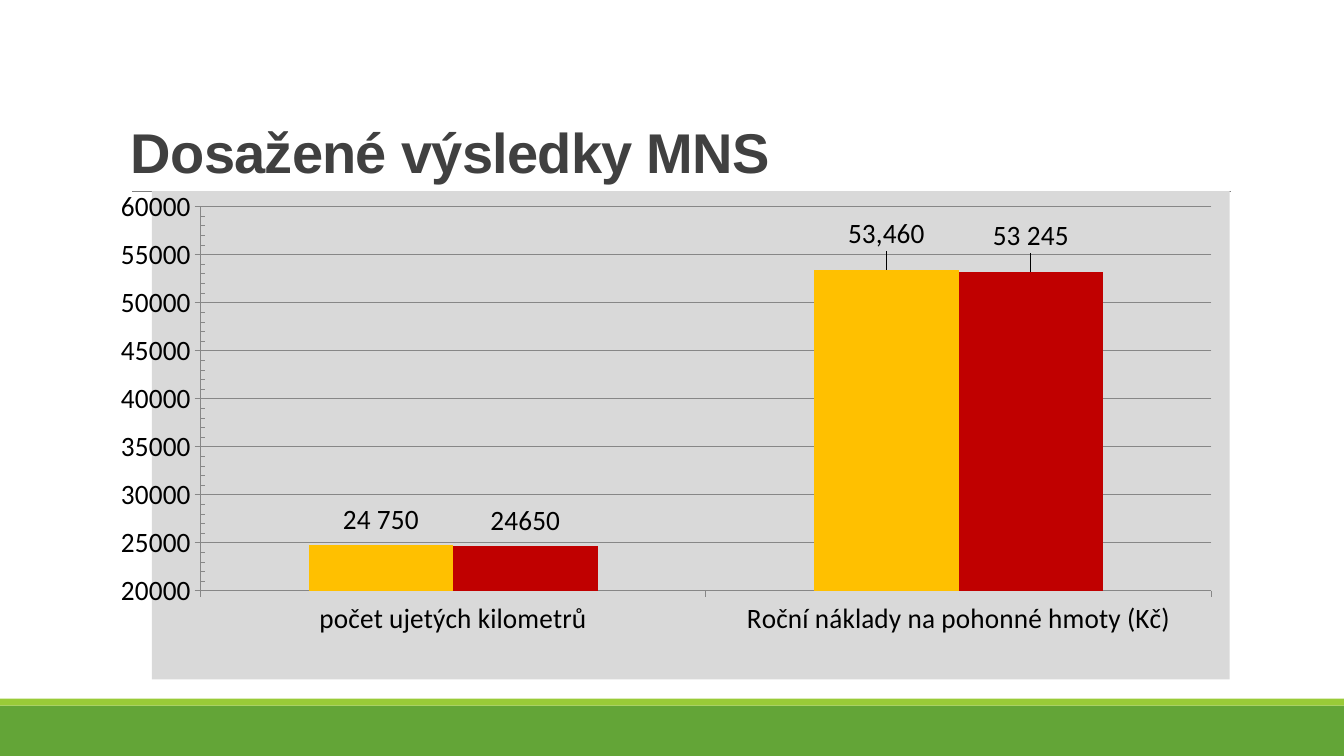
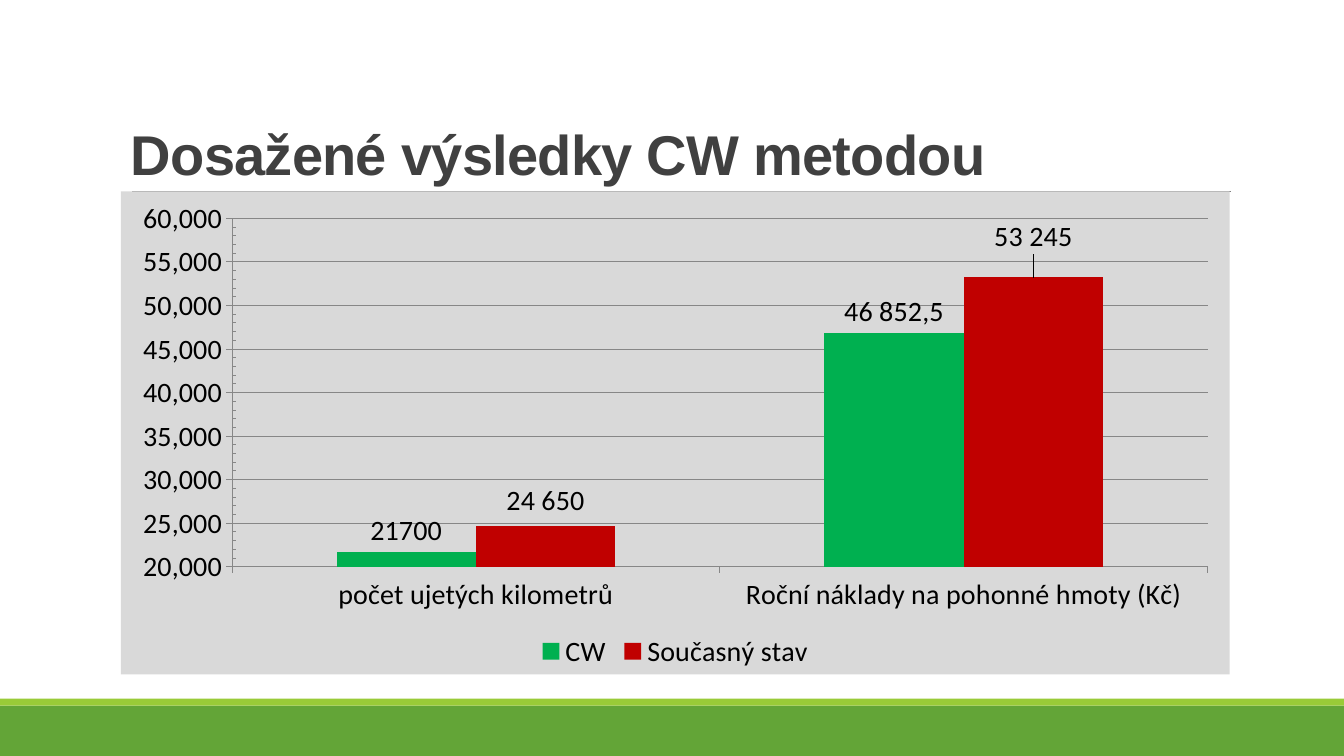
from dataclasses import dataclass

from lxml.etree import SubElement
from pptx import Presentation
from pptx.chart.data import CategoryChartData
from pptx.dml.color import RGBColor
from pptx.enum.chart import XL_CHART_TYPE as ChartType
from pptx.enum.chart import XL_LABEL_POSITION as LabelPosition
from pptx.enum.chart import XL_LEGEND_POSITION as LegendPosition
from pptx.enum.chart import XL_TICK_MARK as TickMark
from pptx.enum.shapes import MSO_CONNECTOR as Connector
from pptx.enum.shapes import MSO_SHAPE as Shape
from pptx.enum.text import MSO_ANCHOR as Anchor
from pptx.oxml import parse_xml
from pptx.oxml.ns import nsdecls, qn
from pptx.util import Inches, Pt

WIDTH, HEIGHT = Inches(13.33), Inches(7.5)
CATEGORIES = ["počet ujetých kilometrů", "Roční náklady na pohonné hmoty (Kč)"]


@dataclass(frozen=True)
class Theme:
    """Colours, fonts and type sizes of the deck."""
    band: str = "63A537"
    strip: str = "99CB38"
    rule: str = "808080"
    title: str = "404040"
    text: str = "000000"
    panel: str = "D9D9D9"
    axis: str = "878787"
    mns: str = "FFC000"
    cw: str = "00B050"
    current: str = "C00000"
    title_font: str = "Arial"
    chart_font: str = "Calibri"
    title_size: int = 40
    chart_size: int = 20


@dataclass(frozen=True)
class Label:
    """A point label: optional wording and upward shift as a share of the chart."""
    text: str = ""
    lift: float = 0


@dataclass(frozen=True)
class Method:
    """One column series with its point labels."""
    name: str
    values: tuple
    color: str
    labels: tuple
    number_format: str = "General"


THEME = Theme()


def rgb(color):
    """Turn a hex string into a colour."""
    return RGBColor.from_string(color)


def place(left, top, width, height):
    """Turn percentages of the slide into a position and a size."""
    return (int(WIDTH * left / 100), int(HEIGHT * top / 100),
            int(WIDTH * width / 100), int(HEIGHT * height / 100))


def style_font(font, name, size, color, bold=False):
    """Set the face, size, colour and weight of a font."""
    font.name, font.size, font.bold = name, Pt(size), bold
    font.color.rgb = rgb(color)


def style_chart_font(font):
    """Give a font the chart's common text style."""
    style_font(font, THEME.chart_font, THEME.chart_size, THEME.text)


def add_band(slide, top, height, color):
    """Draw a full-width band."""
    band = slide.shapes.add_shape(Shape.RECTANGLE, *place(0, top, 100, height))
    band.shadow.inherit = False
    band.fill.solid()
    band.fill.fore_color.rgb = rgb(color)
    band.line.fill.background()


def add_rule(slide):
    """Draw the thin line under the title."""
    left, top, width, _ = place(9.83, 25.33, 81.77, 0)
    rule = slide.shapes.add_connector(Connector.STRAIGHT, left, top, left + width, top)
    rule.line.color.rgb = rgb(THEME.rule)
    rule.line.width = Pt(0.5)
    SubElement(rule._element.spPr, qn("a:effectLst"))


def add_title(slide, wording, bottom):
    """Write the slide title, sitting on the given bottom edge."""
    top = 4.13
    frame = slide.shapes.add_textbox(*place(9, top, 82.5, bottom - top)).text_frame
    frame.word_wrap = True
    frame.vertical_anchor = Anchor.BOTTOM
    frame.text = wording
    paragraph = frame.paragraphs[0]
    paragraph.line_spacing = 0.85
    run = paragraph.runs[0]
    style_font(run.font, THEME.title_font, THEME.title_size, THEME.title, bold=True)
    run._r.get_or_add_rPr().set("spc", "-50")


def manual_layout(**settings):
    """Build a chart layout element from its settings."""
    rows = "".join(f'<c:{key} val="{value}"/>' for key, value in settings.items())
    return parse_xml(f'<c:layout {nsdecls("c")}><c:manualLayout>{rows}'
                     '</c:manualLayout></c:layout>')


def fill_panel(chart):
    """Fill the chart's background."""
    chart._chartSpace.find(qn("c:chart")).addnext(parse_xml(
        f'<c:spPr {nsdecls("c", "a")}><a:solidFill><a:srgbClr val="{THEME.panel}"/>'
        '</a:solidFill><a:ln><a:noFill/></a:ln></c:spPr>'))


def fix_plot(chart, x, y, w, h):
    """Pin the inner plot area to shares of the chart."""
    plot_area = chart._chartSpace.find(qn("c:chart")).find(qn("c:plotArea"))
    for layout in plot_area.findall(qn("c:layout")):
        plot_area.remove(layout)
    plot_area.insert(0, manual_layout(layoutTarget="inner", xMode="edge",
                                      yMode="edge", x=x, y=y, w=w, h=h))


def style_axes(chart, number_format):
    """Set the scale, ticks and lines of both axes."""
    amounts = chart.value_axis
    amounts.minimum_scale, amounts.maximum_scale = 20000, 60000
    amounts.major_unit, amounts.minor_unit = 5000, 1000
    amounts.minor_tick_mark = TickMark.INSIDE
    amounts.has_major_gridlines = True
    amounts.tick_labels.number_format = number_format
    amounts.tick_labels.number_format_is_linked = False
    for axis in (amounts, chart.category_axis):
        axis.major_tick_mark = TickMark.OUTSIDE
        style_chart_font(axis.tick_labels.font)
    for owner in (amounts, chart.category_axis, amounts.major_gridlines):
        owner.format.line.color.rgb = rgb(THEME.axis)
        owner.format.line.width = Pt(0.75)


def label_point(series, index, label):
    """Word and lift the label of one column."""
    caption = series.points[index].data_label
    if label.text:
        caption.text_frame.text = label.text
        style_chart_font(caption.text_frame.paragraphs[0].runs[0].font)
    else:
        style_chart_font(caption.font)
    caption.position = LabelPosition.OUTSIDE_END
    if label.lift:
        mark = series._element.xpath(f'c:dLbls/c:dLbl/c:idx[@val="{index}"]')[0]
        mark.addnext(manual_layout(x=0, y=-label.lift))


def style_series(series, method):
    """Colour a series and label its columns."""
    series.format.fill.solid()
    series.format.fill.fore_color.rgb = rgb(method.color)
    series.invert_if_negative = False
    captions = series.data_labels
    captions.show_value = True
    captions.position = LabelPosition.OUTSIDE_END
    style_chart_font(captions.font)
    for index, label in enumerate(method.labels):
        label_point(series, index, label)


def add_comparison(slide, area, methods, axis_format):
    """Add a column chart that compares the methods."""
    data = CategoryChartData()
    data.categories = CATEGORIES
    for method in methods:
        data.add_series(method.name, method.values, method.number_format)
    chart = slide.shapes.add_chart(ChartType.COLUMN_CLUSTERED, *place(*area), data).chart
    chart.has_title = False
    chart.has_legend = False
    style_chart_font(chart.font)
    fill_panel(chart)
    style_axes(chart, axis_format)
    plot = chart.plots[0]
    plot.gap_width = 150
    plot.vary_by_categories = False
    for series, method in zip(plot.series, methods):
        style_series(series, method)
    return chart


def add_legend(chart):
    """Show the legend below the plot."""
    chart.has_legend = True
    chart.legend.position = LegendPosition.BOTTOM
    chart.legend.include_in_layout = False
    style_chart_font(chart.legend.font)


def add_result_slide(deck, title, title_bottom):
    """Add a slide with the shared bands, rule and title."""
    slide = deck.slides.add_slide(deck.slide_layouts[6])
    add_band(slide, 93.33, 6.67, THEME.band)
    add_band(slide, 92.4, 0.93, THEME.strip)
    add_rule(slide)
    add_title(slide, title, title_bottom)
    return slide


def current_state(*labels):
    """Describe the present situation with the given labels."""
    return Method("Současný stav", (24650, 53245), THEME.current, labels)


def main():
    """Build and save the deck."""
    deck = Presentation()
    deck.slide_width, deck.slide_height = WIDTH, HEIGHT

    slide = add_result_slide(deck, "Dosažené výsledky MNS", 25.07)
    mns = Method("MNS", (24750, 53460), THEME.mns,
                 (Label("24 750", 0.01), Label(lift=0.03)), "#,##0")
    chart = add_comparison(slide, (9, 25.07, 82.5, 64.8),
                           (mns, current_state(Label(lift=0.01), Label("53 245", 0.03))),
                           "General")
    fix_plot(chart, 0.045, 0.032, 0.938, 0.787)

    slide = add_result_slide(deck, "Dosažené výsledky CW metodou", 25.33)
    cw = Method("CW", (21700, 46852.5), THEME.cw, (Label(), Label("46 852,5")))
    chart = add_comparison(slide, (9, 25.33, 82.5, 63.87),
                           (cw, current_state(Label("24 650", 0.01), Label("53 245", 0.04))),
                           "#,##0")
    add_legend(chart)

    deck.save("out.pptx")


if __name__ == "__main__":
    main()
